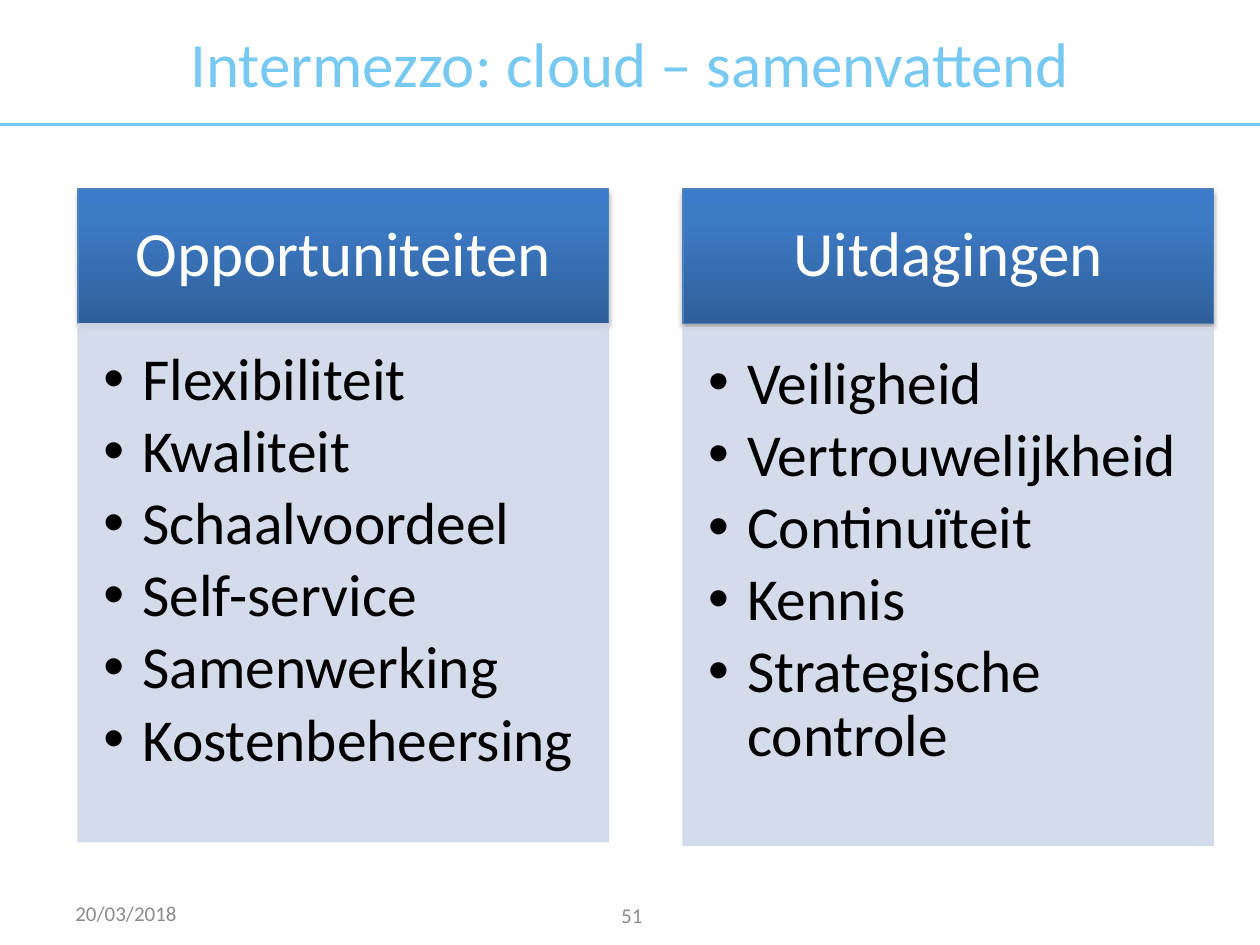
from copy import deepcopy

from lxml.etree import SubElement
from pptx import Presentation
from pptx.dml.color import RGBColor
from pptx.enum.shapes import MSO_CONNECTOR, MSO_SHAPE
from pptx.enum.text import MSO_ANCHOR, PP_ALIGN
from pptx.oxml.ns import qn
from pptx.util import Inches, Pt

SKY = RGBColor(0x77, 0xC9, 0xF2)
GREY = RGBColor(0x8C, 0x8C, 0x8C)
WHITE = RGBColor(0xFF, 0xFF, 0xFF)
BLACK = RGBColor(0x00, 0x00, 0x00)
BORDER = RGBColor(0x4F, 0x81, 0xBD)
PALE = RGBColor(0xD0, 0xD8, 0xE8)
GRADIENT = [
    (0, RGBColor(0x2F, 0x5F, 0x99)),
    (0.8, RGBColor(0x3D, 0x7C, 0xC7)),
    (1, RGBColor(0x3A, 0x7C, 0xCB)),
]
COLUMNS = [
    (5.42, 2.6, "Uitdagingen",
     ["Veiligheid", "Vertrouwelijkheid", "Continuïteit", "Kennis", "Strategische controle"]),
    (0.62, 2.57, "Opportuniteiten",
     ["Flexibiliteit", "Kwaliteit", "Schaalvoordeel", "Self-service", "Samenwerking",
      "Kostenbeheersing"]),
]


def write(paragraph, text, size, color, alignment=PP_ALIGN.LEFT):
    paragraph.alignment = alignment
    run = paragraph.add_run()
    run.text = text
    run.font.name = "Calibri"
    run.font.size = Pt(size)
    run.font.color.rgb = color


def prepare(frame, anchor, left=0.1, top=0.05, right=0.1, bottom=0.05):
    frame.word_wrap = True
    frame.vertical_anchor = anchor
    frame.margin_left = Inches(left)
    frame.margin_top = Inches(top)
    frame.margin_right = Inches(right)
    frame.margin_bottom = Inches(bottom)


presentation = Presentation()
presentation.slide_width = Inches(10)
presentation.slide_height = Inches(7.5)
slide = presentation.slides.add_slide(presentation.slide_layouts[6])

rule = slide.shapes.add_connector(
    MSO_CONNECTOR.STRAIGHT, Inches(0), Inches(0.99), Inches(10), Inches(0.99))
rule.line.color.rgb = SKY
rule.line.width = Pt(1.5)
SubElement(rule.element.spPr, qn("a:effectLst"))

for left, top, width, height, text, size, color, alignment in [
    (0, 0, 10, 0.99, "Intermezzo: cloud – samenvattend", 36, SKY, PP_ALIGN.CENTER),
    (3.85, 7.06, 2.33, 0.4, "51", 12, GREY, PP_ALIGN.CENTER),
    (0.5, 7.05, 2.33, 0.4, "20/03/2018", 12, GREY, PP_ALIGN.LEFT),
]:
    box = slide.shapes.add_textbox(Inches(left), Inches(top), Inches(width), Inches(height))
    prepare(box.text_frame, MSO_ANCHOR.MIDDLE)
    write(box.text_frame.paragraphs[0], text, size, color, alignment)

for left, body_top, heading, items in COLUMNS:
    header = slide.shapes.add_shape(
        MSO_SHAPE.RECTANGLE, Inches(left), Inches(1.5), Inches(4.21), Inches(1.07))
    header.fill.gradient()
    header.fill.gradient_angle = 90
    stop_list = header.element.spPr.find(qn("a:gradFill")).find(qn("a:gsLst"))
    stop_list.append(deepcopy(stop_list[0]))
    for stop, (position, color) in zip(header.fill.gradient_stops, GRADIENT):
        stop.position = position
        stop.color.rgb = color
    header.line.color.rgb = BORDER
    header.line.width = Pt(0.75)
    header.shadow.inherit = False
    effects = header.element.spPr.find(qn("a:effectLst"))
    shadow = SubElement(effects, qn("a:outerShdw"), blurRad=str(Pt(3.1)), dist=str(Pt(1.8)),
                        dir="5400000", rotWithShape="0")
    shadow_color = SubElement(shadow, qn("a:srgbClr"), val=str(BLACK))
    SubElement(shadow_color, qn("a:alpha"), val="35000")
    prepare(header.text_frame, MSO_ANCHOR.MIDDLE, 0.28, 0.16, 0.28, 0.16)
    header.text_frame.paragraphs[0].line_spacing = 0.9
    write(header.text_frame.paragraphs[0], heading, 36, WHITE, PP_ALIGN.CENTER)

    body = slide.shapes.add_shape(
        MSO_SHAPE.RECTANGLE, Inches(left), Inches(body_top), Inches(4.21), Inches(4.11))
    body.fill.solid()
    body.fill.fore_color.rgb = PALE
    body.line.color.rgb = PALE
    body.line.width = Pt(0.75)
    body.shadow.inherit = False
    for color_element in list(body.element.spPr.iter(qn("a:srgbClr"))):
        SubElement(color_element, qn("a:alpha"), val="90000")
    prepare(body.text_frame, MSO_ANCHOR.TOP, 0.2, 0.2, 0.26, 0.3)
    for index, item in enumerate(items):
        paragraph = body.text_frame.paragraphs[0] if index == 0 else body.text_frame.add_paragraph()
        paragraph.level = 1
        paragraph.line_spacing = 0.9
        paragraph.space_after = Pt(4.5)
        write(paragraph, item, 34, BLACK)
        properties = paragraph._p.get_or_add_pPr()
        properties.set("marL", str(Inches(0.31)))
        properties.set("indent", str(Inches(-0.31)))
        SubElement(properties, qn("a:buFont"), typeface="Arial")
        SubElement(properties, qn("a:buChar"), char="•")

presentation.save("out.pptx")
